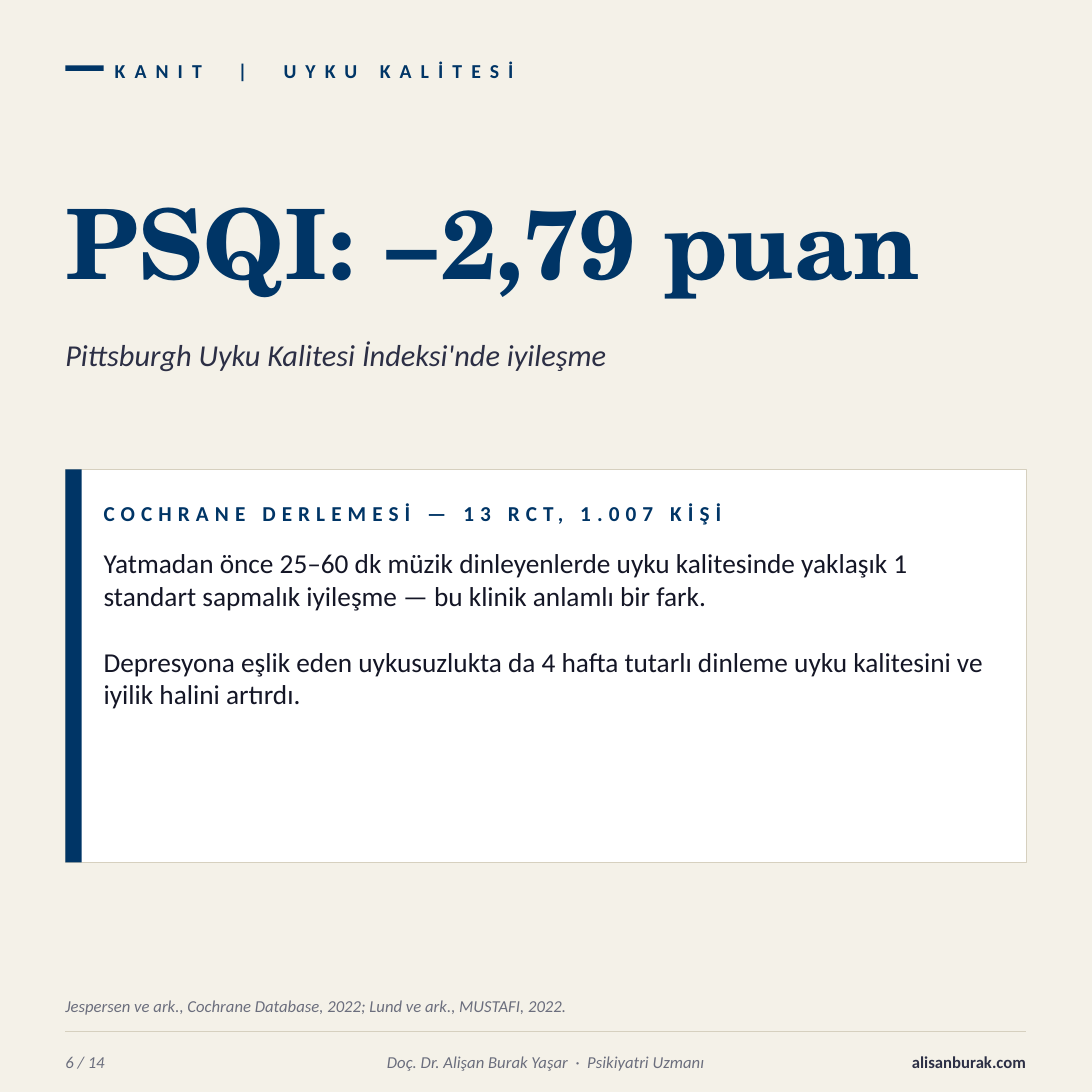
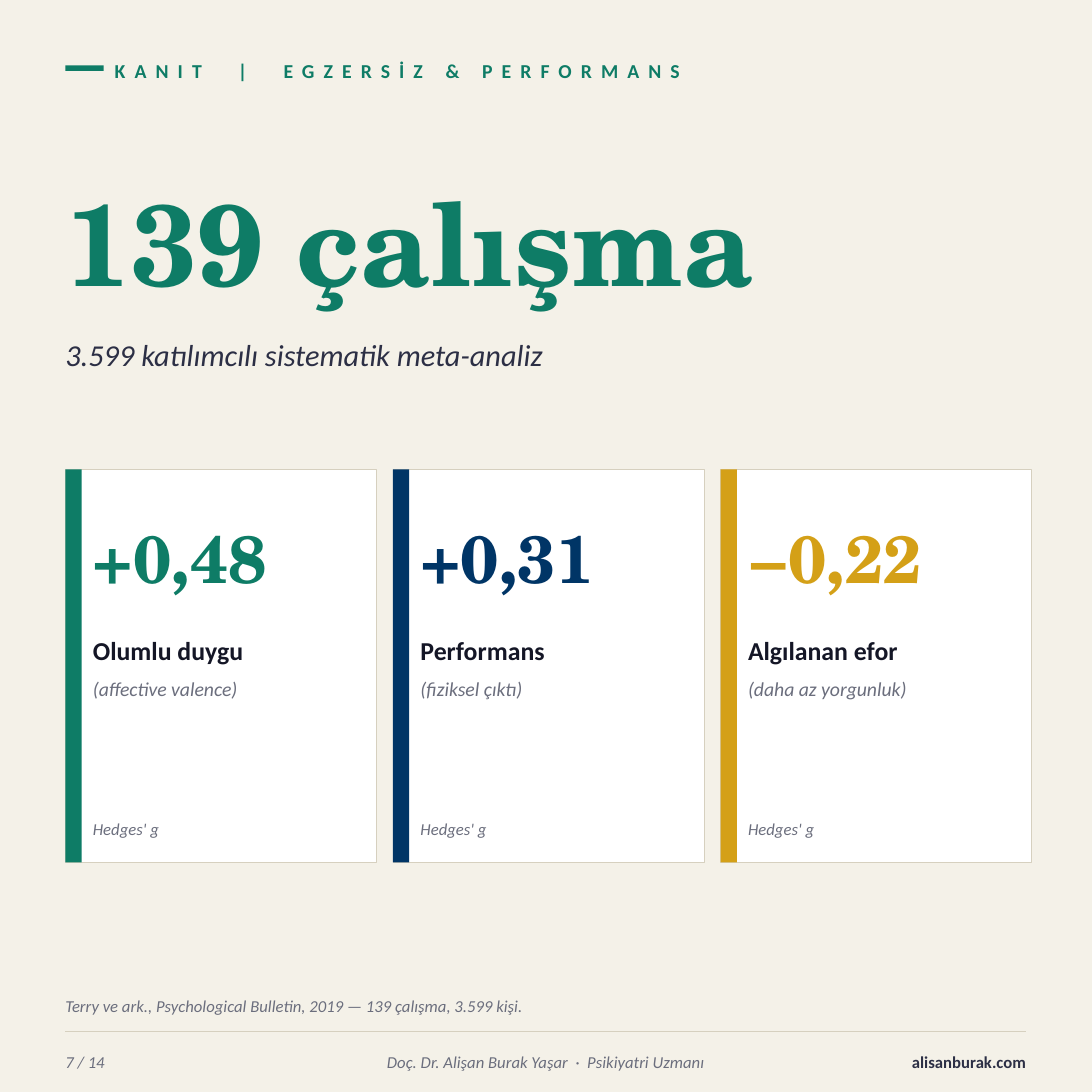
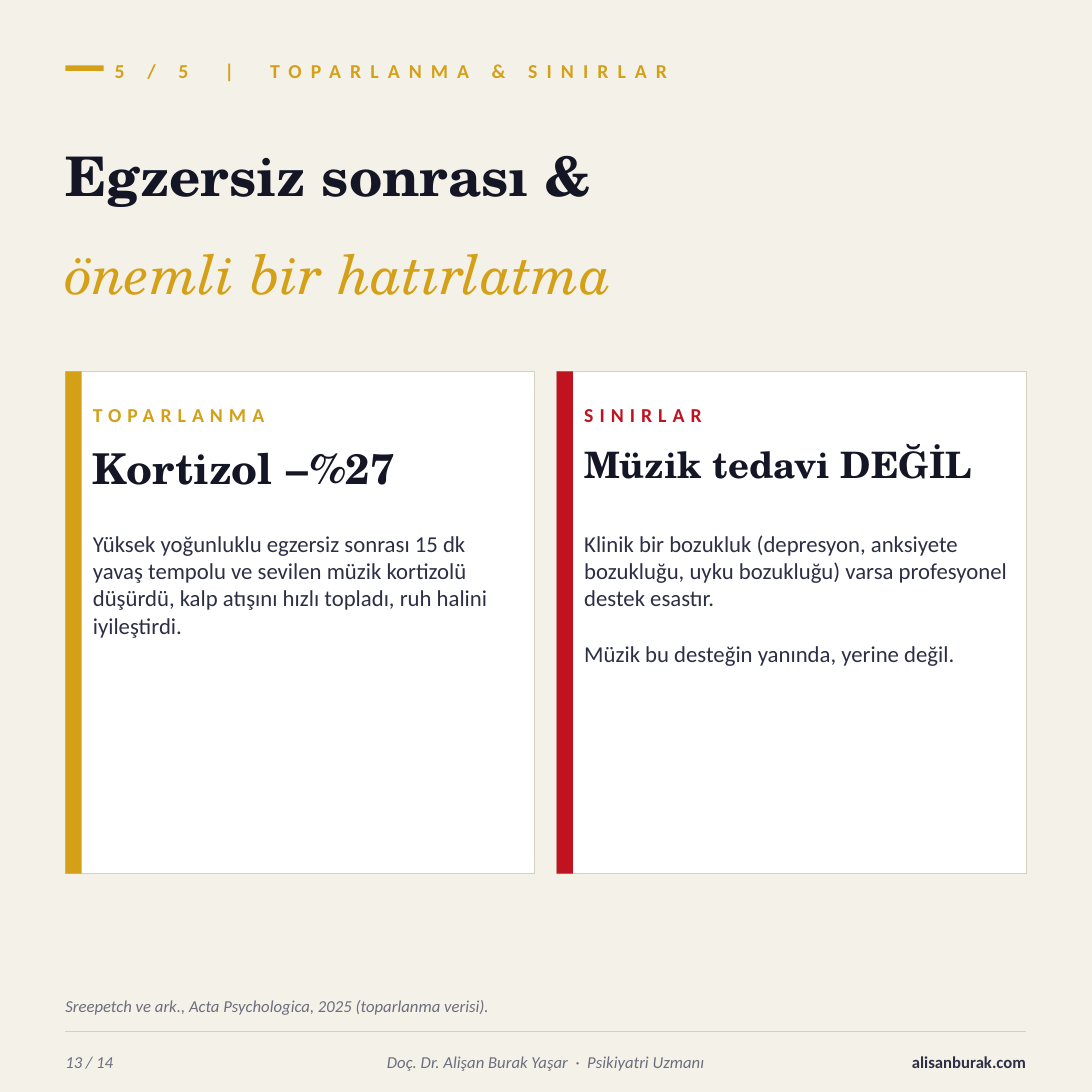
from dataclasses import dataclass

from pptx import Presentation
from pptx import util as u
from pptx.dml.color import RGBColor
from pptx.enum import shapes, text
from pptx.oxml.ns import qn
from pptx.oxml.xmlchemy import OxmlElement

SANS, SERIF = "Calibri", "TeX Gyre Schola"
MIDDLE, TOP = text.MSO_ANCHOR.MIDDLE, text.MSO_ANCHOR.TOP


@dataclass(frozen=True)
class Style:
    size: int
    font: str = SANS
    bold: bool = False
    italic: bool = False
    tracking: int = 0  # extra letter spacing, points


@dataclass(frozen=True)
class Theme:
    # Colours
    paper: str = "F4F1E8"
    white: str = "FFFFFF"
    border: str = "D6D0BF"
    ink: str = "141626"
    body: str = "2C2F45"
    muted: str = "6B6E7D"
    navy: str = "003566"
    green: str = "0E7C66"
    gold: str = "D4A017"
    red: str = "C1121F"
    # Type
    eyebrow: Style = Style(13, bold=True, tracking=6)
    label: Style = Style(13, bold=True, tracking=4)
    wide_label: Style = Style(14, bold=True, tracking=4)
    subtitle: Style = Style(20, italic=True)
    title: Style = Style(36, SERIF, bold=True)
    title_accent: Style = Style(36, SERIF, italic=True)
    figure: Style = Style(44, SERIF, bold=True)
    name: Style = Style(17, bold=True)
    hint: Style = Style(13, italic=True)
    text: Style = Style(15)
    wide_text: Style = Style(18)
    note: Style = Style(11, italic=True)
    site: Style = Style(11, bold=True)
    line_height: float = 1.22
    # Lengths in cm
    page: float = 25.4
    left: float = 1.52
    width: float = 22.35
    bar: float = 0.38
    inset: float = 0.64


T = Theme()


def add_text(s, x, y, w, h, words, style, color, anchor=MIDDLE, align=None):
    """Text box without margins; several paragraphs stand one line apart."""
    tf = s.shapes.add_textbox(u.Cm(x), u.Cm(y), u.Cm(w), u.Cm(h)).text_frame
    tf.word_wrap = True
    tf.vertical_anchor = anchor
    tf.margin_left = tf.margin_right = tf.margin_top = tf.margin_bottom = 0
    for i, line in enumerate([words] if isinstance(words, str) else words):
        p = tf.add_paragraph() if i else tf.paragraphs[0]
        p.text = line
        if align is not None:
            p.alignment = align
        if i:
            p.space_before = u.Pt(round(style.size * T.line_height, 1))
        f = p.font
        f.name, f.size = style.font, u.Pt(style.size)
        f.bold, f.italic = style.bold, style.italic
        f.color.rgb = RGBColor.from_string(color)
        if style.tracking:
            p._p.pPr.find(qn("a:defRPr")).set("spc", str(style.tracking * 100))


def add_rect(s, x, y, w, h, fill, border=None):
    sp = s.shapes.add_shape(shapes.MSO_SHAPE.RECTANGLE,
                            u.Cm(x), u.Cm(y), u.Cm(w), u.Cm(h))
    sp.shadow.inherit = False
    sp.fill.solid()
    sp.fill.fore_color.rgb = RGBColor.from_string(fill)
    if border:
        sp.line.color.rgb = RGBColor.from_string(border)
        sp.line.width = u.Pt(0.5)
    else:
        sp.line.fill.background()


def add_card(s, x, y, w, h, accent):
    """White card with a coloured bar on its left edge."""
    add_rect(s, x, y, w, h, T.white, T.border)
    add_rect(s, x, y, T.bar, h, accent)


def add_rule(s, y):
    line = s.shapes.add_connector(shapes.MSO_CONNECTOR.STRAIGHT, u.Cm(T.left),
                                  u.Cm(y), u.Cm(T.left + T.width), u.Cm(y))
    line.line.color.rgb = RGBColor.from_string(T.border)
    line.line.width = u.Pt(0.75)
    line._element.spPr.append(OxmlElement("a:effectLst"))


def add_page(prs, number, eyebrow, accent, source):
    """Blank slide with the shared eyebrow, source line and footer."""
    s = prs.slides.add_slide(prs.slide_layouts[6])
    add_rect(s, T.left, 1.52, 0.89, 0.13, accent)
    add_text(s, 2.67, 1.14, 19.05, 1.02, eyebrow, T.eyebrow, accent)
    add_text(s, T.left, 22.99, T.width, 0.81, source, T.note, T.muted)
    add_rule(s, 24)
    # Footer
    y, h = 24.26, 0.89
    add_text(s, T.left, y, 3.81, h, f"{number} / 14", T.note, T.muted)
    add_text(s, 5.59, y, 14.22, h,
             "Doç. Dr. Alişan Burak Yaşar  ·  Psikiyatri Uzmanı",
             T.note, T.muted, align=text.PP_ALIGN.CENTER)
    add_text(s, 20.06, y, 3.81, h, "alisanburak.com",
             T.site, T.body, align=text.PP_ALIGN.RIGHT)
    return s


def add_headline(s, headline, size, color, subtitle):
    add_text(s, T.left, 3.81, T.width, 3.56, headline,
             Style(size, SERIF, bold=True), color)
    add_text(s, T.left, 7.49, T.width, 1.52, subtitle, T.subtitle, T.body)


def sleep_slide(prs):
    s = add_page(prs, 6, "KANIT  |  UYKU KALİTESİ", T.navy,
                 "Jespersen ve ark., Cochrane Database, 2022; "
                 "Lund ve ark., MUSTAFI, 2022.")
    add_headline(s, "PSQI: −2,79 puan", 64, T.navy,
                 "Pittsburgh Uyku Kalitesi İndeksi'nde iyileşme")
    add_card(s, T.left, 10.92, T.width, 9.14, T.navy)
    x, w = T.left + 0.89, 20.57
    add_text(s, x, 11.43, w, 1.02, "COCHRANE DERLEMESİ — 13 RCT, 1.007 KİŞİ",
             T.wide_label, T.navy)
    add_text(s, x, 12.7, w, 6.86, [
        "Yatmadan önce 25–60 dk müzik dinleyenlerde uyku kalitesinde yaklaşık "
        "1 standart sapmalık iyileşme — bu klinik anlamlı bir fark.",
        "Depresyona eşlik eden uykusuzlukta da 4 hafta tutarlı dinleme uyku "
        "kalitesini ve iyilik halini artırdı."],
        T.wide_text, T.ink, TOP)


def exercise_slide(prs):
    s = add_page(prs, 7, "KANIT  |  EGZERSİZ & PERFORMANS", T.green,
                 "Terry ve ark., Psychological Bulletin, 2019 — "
                 "139 çalışma, 3.599 kişi.")
    add_headline(s, "139 çalışma", 76, T.green,
                 "3.599 katılımcılı sistematik meta-analiz")
    # Effect size cards
    effects = [
        ("+0,48", "Olumlu duygu", "(affective valence)", T.green),
        ("+0,31", "Performans", "(fiziksel çıktı)", T.navy),
        ("−0,22", "Algılanan efor", "(daha az yorgunluk)", T.gold),
    ]
    card_w, gap, w = 7.24, 0.38, 6.22
    for i, (value, name, hint, accent) in enumerate(effects):
        left = T.left + i * (card_w + gap)
        x = left + T.inset
        add_card(s, left, 10.92, card_w, 9.14, accent)
        add_text(s, x, 11.56, w, 2.79, value, T.figure, accent)
        add_text(s, x, 14.48, w, 1.27, name, T.name, T.ink)
        add_text(s, x, 15.75, w, 1.27, hint, T.hint, T.muted, TOP)
        add_text(s, x, 19.05, w, 0.76, "Hedges' g", T.note, T.muted, TOP)


def recovery_slide(prs):
    s = add_page(prs, 13, "5 / 5  |  TOPARLANMA & SINIRLAR", T.gold,
                 "Sreepetch ve ark., Acta Psychologica, 2025 "
                 "(toparlanma verisi).")
    add_text(s, T.left, 3.3, T.width, 2.29, "Egzersiz sonrası &",
             T.title, T.ink, TOP)
    add_text(s, T.left, 5.59, T.width, 2.29, "önemli bir hatırlatma",
             T.title_accent, T.gold, TOP)
    # Recovery and limits cards
    topics = [
        ("TOPARLANMA", "Kortizol −%27", 28, T.gold,
         "Yüksek yoğunluklu egzersiz sonrası 15 dk yavaş tempolu ve sevilen "
         "müzik kortizolü düşürdü, kalp atışını hızlı topladı, ruh halini "
         "iyileştirdi."),
        ("SINIRLAR", "Müzik tedavi DEĞİL", 24, T.red,
         ["Klinik bir bozukluk (depresyon, anksiyete bozukluğu, uyku "
          "bozukluğu) varsa profesyonel destek esastır.",
          "Müzik bu desteğin yanında, yerine değil."]),
    ]
    card_w, gap, w = 10.92, 0.51, 9.91
    for i, (label, heading, size, accent, words) in enumerate(topics):
        left = T.left + i * (card_w + gap)
        x = left + T.inset
        add_card(s, left, 8.64, card_w, 11.68, accent)
        add_text(s, x, 9.14, w, 1.02, label, T.label, accent)
        add_text(s, x, 10.29, w, 1.78, heading,
                 Style(size, SERIF, bold=True), T.ink, TOP)
        add_text(s, x, 12.32, w, 7.37, words, T.text, T.body, TOP)


def main():
    prs = Presentation()
    prs.slide_width = prs.slide_height = u.Cm(T.page)
    # Shared background
    fill = prs.slide_master.background.fill
    fill.solid()
    fill.fore_color.rgb = RGBColor.from_string(T.paper)
    sleep_slide(prs)
    exercise_slide(prs)
    recovery_slide(prs)
    prs.save("out.pptx")


if __name__ == "__main__":
    main()
